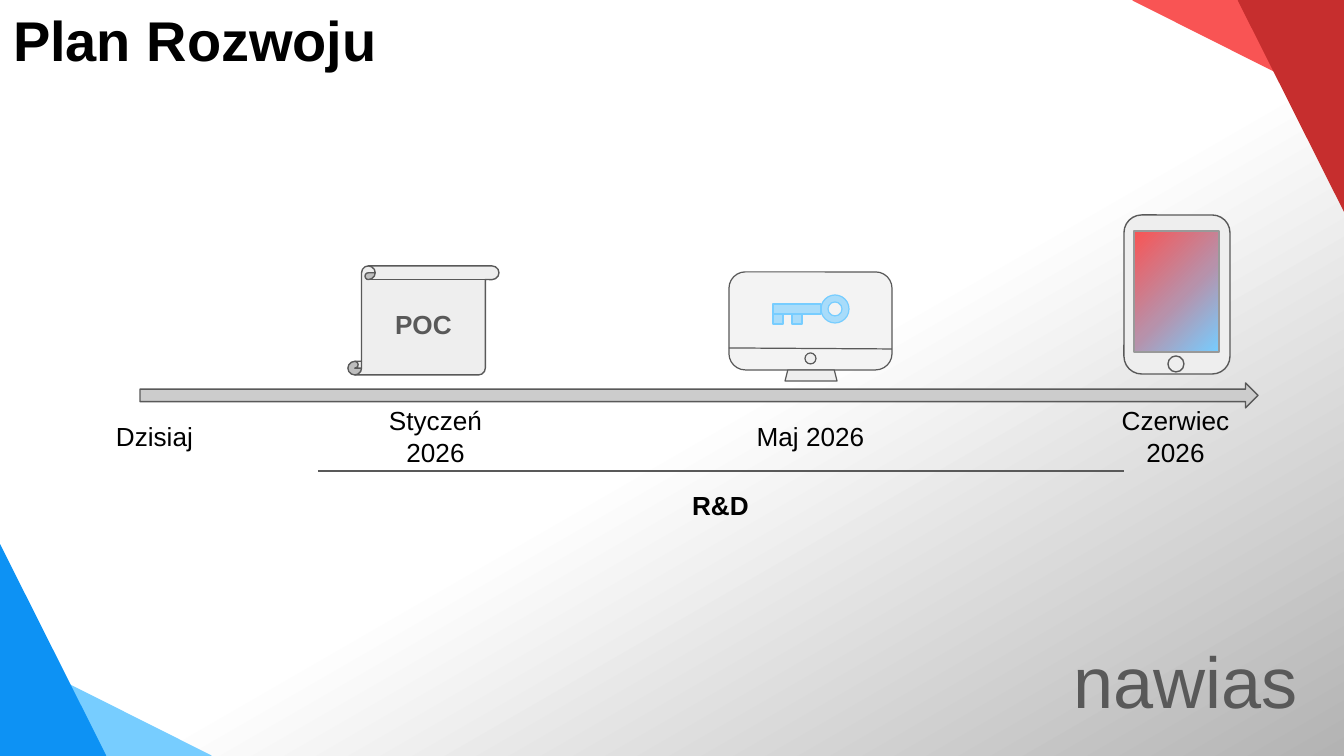
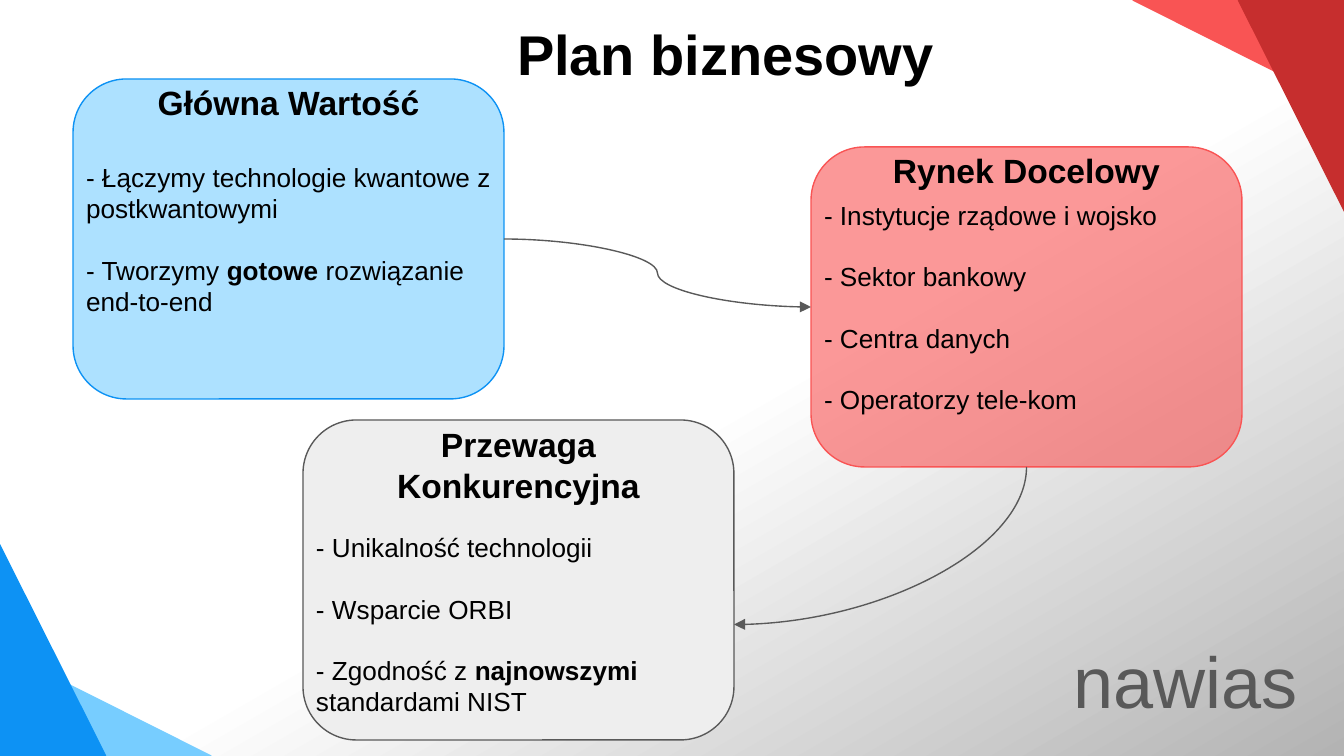
from lxml.etree import SubElement
from pptx import Presentation
from pptx.dml.color import RGBColor
from pptx.enum.shapes import MSO_CONNECTOR as LINE, MSO_SHAPE as SHAPE
from pptx.enum.text import MSO_ANCHOR as ANCHOR, PP_ALIGN as ALIGN
from pptx.oxml.ns import qn
from pptx.util import Emu, Pt

PX = 914400 / 134.4
FONT = "Arial"
BLACK, DARK, GREY, LIGHT = "000000", "595959", "CCCCCC", "EEEEEE"
BLUE, SKY, RED, CORAL = "0D92F4", "77CDFF", "C62E2E", "F95454"

BACKGROUND = [(0, "FFFFFF"), (54, "FFFFFF"), (100, "B3B3B3")]
SCREEN = [(0, CORAL), (55, "B891AA"), (100, SKY)]
CORNERS = [
    ((0, 650, 211, 106), SKY, 0, False),
    ((-53, 597, 211, 106), BLUE, 90, True),
    ((1133, 0, 211, 106), CORAL, 180, False),
    ((1186, 53, 211, 106), RED, 270, True),
]
BRAND = ("nawias", (1027, 618, 317, 124))

ROADMAP_TITLE = ("Plan Rozwoju", (0, 0, 542, 79))
TIMELINE = (140, 383, 1118, 25)
MILESTONES = [("Dzisiaj", 86), ("Styczeń 2026", 367),
              ("Maj 2026", 742), ("Czerwiec 2026", 1107)]
MILESTONE_TOP, MILESTONE_SIZE = 410, (137, 52)
SCROLL = ("POC", (348, 266, 151, 109))
PHONE = [
    (SHAPE.ROUNDED_RECTANGLE, (1124, 215, 106, 159), LIGHT, DARK),
    (SHAPE.RECTANGLE, (1134, 231, 85, 121), SCREEN, "999999"),
    (SHAPE.OVAL, (1168, 356, 16, 16), LIGHT, DARK),
]
MONITOR = [
    (SHAPE.ROUNDED_RECTANGLE, (729, 272, 163, 98), "F3F3F3"),
    (SHAPE.OVAL, (805, 353, 11, 11), LIGHT),
    (SHAPE.TRAPEZOID, (785, 370, 52, 11), LIGHT),
]
MONITOR_EDGE = (892, 349, 729, 348)
KEY = [
    (SHAPE.DONUT, (821, 295, 28, 28)),
    (SHAPE.RECTANGLE, (773, 304, 48, 10)),
    (SHAPE.RECTANGLE, (773, 314, 10, 10)),
    (SHAPE.RECTANGLE, (792, 314, 10, 10)),
]
RESEARCH = ("R&D", (663, 471, 115, 69))
RESEARCH_LINE = (318, 471, 1124, 471)

BUSINESS_TITLE = ("Plan biznesowy", (504, 0, 462, 106))
CARD_SIZE = (431, 320)
CARDS = [
    dict(heading="Główna Wartość", corner=(73, 79), heading_height=47, body_offset=0,
         fill=SKY, line=BLUE, opacity=60,
         points=["- Łączymy technologie kwantowe z postkwantowymi",
                 "- Tworzymy *gotowe* rozwiązanie end-to-end"]),
    dict(heading="Rynek Docelowy", corner=(811, 147), heading_height=47, body_offset=0,
         fill=CORAL, line=CORAL, opacity=60,
         points=["- Instytucje rządowe i wojsko", "- Sektor bankowy",
                 "- Centra danych", "- Operatorzy tele-kom"]),
    dict(heading="Przewaga Konkurencyjna", corner=(303, 420), heading_height=89,
         body_offset=89, fill=LIGHT, line=DARK, opacity=100,
         points=["- Unikalność technologii", "- Wsparcie ORBI",
                 "- Zgodność z *najnowszymi* standardami NIST"]),
]


def px(value):
    return Emu(round(value * PX))


def color(hex_value):
    return RGBColor.from_string(hex_value)


def set_gradient(fill, parent, stops, angle):
    fill.gradient()
    fill.gradient_angle = 360 - angle
    stop_list = next(parent.iter(qn("a:gsLst")))
    for stop in list(stop_list):
        stop_list.remove(stop)
    for position, hex_value in stops:
        stop = SubElement(stop_list, qn("a:gs"), pos=str(position * 1000))
        SubElement(stop, qn("a:srgbClr"), val=hex_value)


def add_shape(slide, preset, box, fill, line, width=0.75, opacity=100, rotation=0, flip=False):
    shape = slide.shapes.add_shape(preset, *map(px, box))
    shape.shadow.inherit = False
    properties = shape.element.spPr
    if isinstance(fill, list):
        set_gradient(shape.fill, properties, fill, 45)
    else:
        shape.fill.solid()
        shape.fill.fore_color.rgb = color(fill)
    if opacity < 100:
        tint = properties.find(qn("a:solidFill")).find(qn("a:srgbClr"))
        SubElement(tint, qn("a:alpha"), val=str(opacity * 1000))
    shape.line.color.rgb = color(line)
    shape.line.width = Pt(width)
    shape.rotation = rotation
    if flip:
        properties.xfrm.set("flipH", "1")
    return shape


def write(shape, paragraphs, size, bold=False, align=ALIGN.CENTER, ink=BLACK, inset=13, gap=0):
    frame = shape.text_frame
    frame.word_wrap = True
    frame.vertical_anchor = ANCHOR.MIDDLE
    frame.margin_left = frame.margin_right = px(inset)
    frame.margin_top = frame.margin_bottom = px(inset)
    for index, text in enumerate(paragraphs):
        paragraph = frame.add_paragraph() if index else frame.paragraphs[0]
        paragraph.alignment = align
        paragraph.space_before = Pt(gap if index else 0)
        font = paragraph.font
        font.name, font.size, font.bold = FONT, Pt(size), bold
        font.color.rgb = color(ink)
        for part, piece in enumerate(text.split("*")):
            run = paragraph.add_run()
            run.text = piece
            if part % 2:
                run.font.bold = True


def add_text(slide, box, paragraphs, size, **style):
    text_box = slide.shapes.add_textbox(*map(px, box))
    write(text_box, paragraphs, size, **style)
    return text_box


def add_line(slide, ends, kind=LINE.STRAIGHT, width=0.75):
    connector = slide.shapes.add_connector(kind, *map(px, ends))
    connector.line.color.rgb = color(DARK)
    connector.line.width = Pt(width)
    SubElement(connector.element.spPr, qn("a:effectLst"))
    return connector


def add_curve(slide, start, start_side, end, end_side):
    connector = add_line(slide, (0, 0, 1, 1), LINE.CURVE)
    connector.begin_connect(start, start_side)
    connector.end_connect(end, end_side)
    outline = connector.element.spPr.find(qn("a:ln"))
    SubElement(outline, qn("a:tailEnd"), type="triangle")
    return connector


def bend_down_left(connector):
    left, top, width, height = connector.left, connector.top, connector.width, connector.height
    connector.left = left + (width - height) // 2
    connector.top = top + (height - width) // 2
    connector.width, connector.height = height, width
    properties = connector.element.spPr
    properties.xfrm.attrib.pop("flipH", None)
    properties.xfrm.set("rot", str(90 * 60000))
    properties.find(qn("a:prstGeom")).set("prst", "curvedConnector2")


def add_slide(presentation, title):
    slide = presentation.slides.add_slide(presentation.slide_layouts[6])
    name, name_box = BRAND
    add_text(slide, name_box, [name], 38.6, ink=DARK, inset=5)
    for box, fill, rotation, flip in CORNERS:
        add_shape(slide, SHAPE.RIGHT_TRIANGLE, box, fill, fill, rotation=rotation, flip=flip)
    text, box = title
    add_text(slide, box, [text], 30, bold=True, align=ALIGN.LEFT)
    return slide


def build_roadmap(presentation):
    slide = add_slide(presentation, ROADMAP_TITLE)
    add_shape(slide, SHAPE.RIGHT_ARROW, TIMELINE, GREY, DARK)
    for label, left in MILESTONES:
        add_text(slide, (left, MILESTONE_TOP, *MILESTONE_SIZE), [label], 14)
    label, box = SCROLL
    scroll = add_shape(slide, SHAPE.VERTICAL_SCROLL, box, LIGHT, DARK)
    write(scroll, [label], 14, bold=True, ink=DARK)
    for part in PHONE:
        add_shape(slide, *part)
    for part in MONITOR:
        add_shape(slide, *part, DARK, width=0.65)
    add_line(slide, MONITOR_EDGE, width=0.65)
    add_line(slide, RESEARCH_LINE)
    label, box = RESEARCH
    add_text(slide, box, [label], 14, bold=True)
    for part in KEY:
        add_shape(slide, *part, SKY, SKY, width=0.64, opacity=60)


def add_card(slide, card):
    left, top = card["corner"]
    width, height = CARD_SIZE
    offset = card["body_offset"]
    add_shape(slide, SHAPE.ROUNDED_RECTANGLE, (left, top, width, height),
              card["fill"], card["line"], opacity=card["opacity"])
    add_text(slide, (left, top, width, card["heading_height"]),
             [card["heading"]], 18, bold=True)
    return add_text(slide, (left, top + offset, width, height - offset),
                    card["points"], 14, align=ALIGN.LEFT, gap=16)


def build_business(presentation):
    slide = add_slide(presentation, BUSINESS_TITLE)
    value, market, advantage = [add_card(slide, card) for card in CARDS]
    add_curve(slide, value, 3, market, 1)
    bend_down_left(add_curve(slide, market, 2, advantage, 3))


def main():
    presentation = Presentation()
    presentation.slide_width, presentation.slide_height = px(1344), px(756)
    master = presentation.slide_master
    set_gradient(master.background.fill, master.element, BACKGROUND, 60)
    build_roadmap(presentation)
    build_business(presentation)
    presentation.save("out.pptx")


if __name__ == "__main__":
    main()
